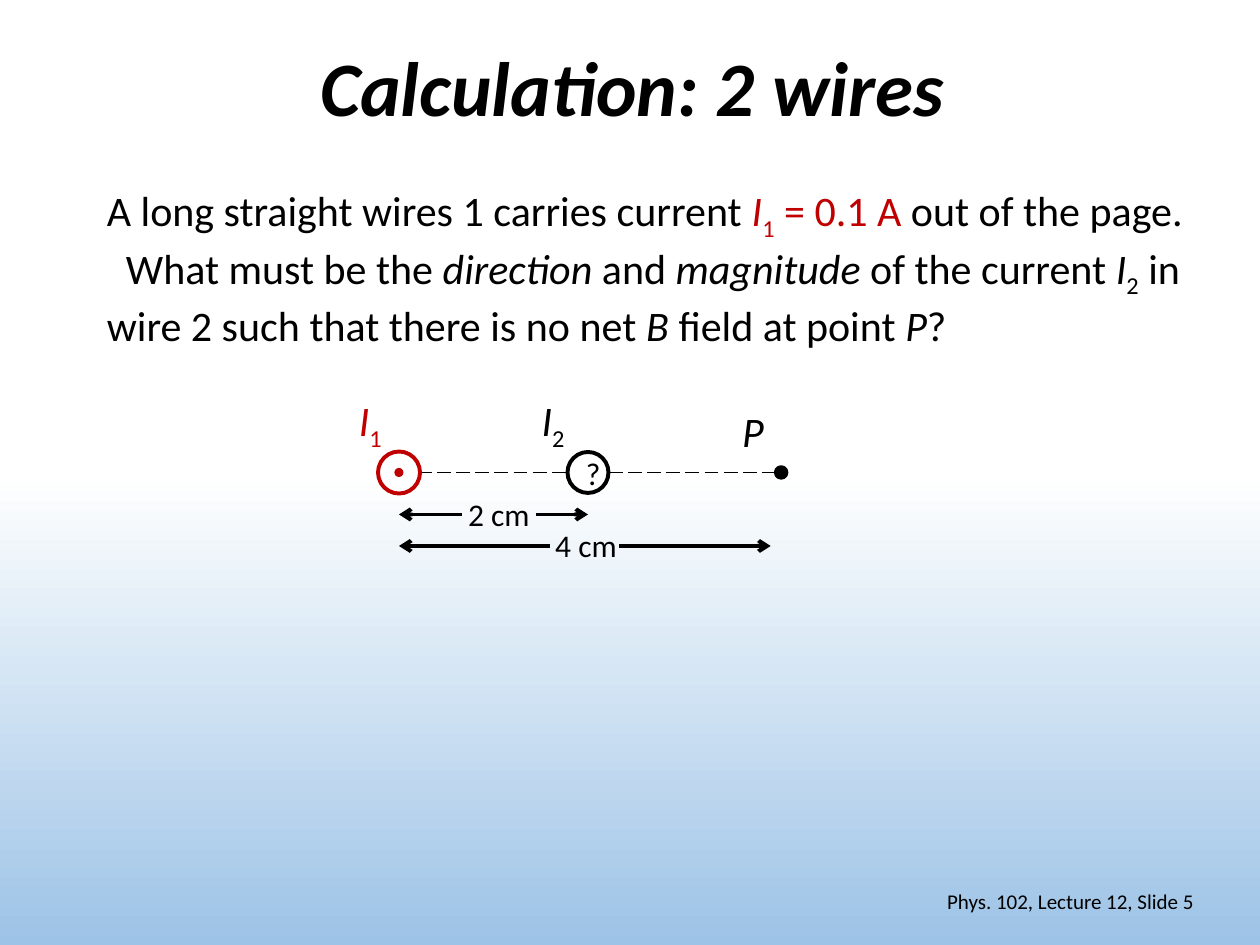
from lxml.etree import SubElement
from pptx import Presentation
from pptx.dml.color import RGBColor
from pptx.enum.dml import MSO_LINE_DASH_STYLE as Dash
from pptx.enum.shapes import MSO_CONNECTOR as Connector, MSO_SHAPE as Shape
from pptx.enum.text import MSO_ANCHOR as Anchor, MSO_AUTO_SIZE as AutoSize, PP_ALIGN as Align
from pptx.oxml.ns import qn
from pptx.util import Inches, Pt

BLACK, RED, WHITE, BLUE = "000000", "C00000", "FFFFFF", "9DC3E6"
COLUMNS, ROWS = 120, 90
rgb = RGBColor.from_string

presentation = Presentation()
presentation.slide_width, presentation.slide_height = Inches(10), Inches(7.5)
slide = presentation.slides.add_slide(presentation.slide_layouts[6])
column = presentation.slide_width / COLUMNS
row = presentation.slide_height / ROWS


def place(left, top, width, height):
    return [round(left * column), round(top * row), round(width * column), round(height * row)]


def write(shape, runs, size, color=BLACK, align=Align.LEFT, spacing=None, **frame_format):
    frame = shape.text_frame
    for key, value in {"word_wrap": True, **frame_format}.items():
        setattr(frame, key, value)
    paragraph = frame.paragraphs[0]
    paragraph.alignment, paragraph.line_spacing = align, spacing
    for text, style, run_color in runs:
        run = paragraph.add_run()
        run.text = text
        font_format = {"name": "Calibri", "size": Pt(size), "bold": "b" in style, "italic": "i" in style}
        for key, value in font_format.items():
            setattr(run.font, key, value)
        run.font.color.rgb = rgb(run_color or color)
        if "s" in style:
            run._r.get_or_add_rPr().set("baseline", "-25000")


background = slide.background.fill
background.gradient()
background.gradient_angle = 270
for stop, position, color in zip(background.gradient_stops, (0.5, 1), (WHITE, BLUE)):
    stop.position, stop.color.rgb = position, rgb(color)

title = slide.shapes.add_textbox(*place(8.5, 0, 103.5, 17.4))
write(title, [("Calculation: 2 wires", "bi", None)], 44, align=Align.CENTER, spacing=0.9,
      vertical_anchor=Anchor.MIDDLE)

footer = slide.shapes.add_textbox(*place(84.7, 83.4, 30.2, 4.8))
write(footer, [("Phys. 102, Lecture 12, Slide 5", "", None)], 12, align=Align.RIGHT,
      vertical_anchor=Anchor.MIDDLE)

question = slide.shapes.add_textbox(*place(9, 17, 105, 15.7))
write(question, [
    ("A long straight wires 1 carries current ", "", None),
    ("I", "i", RED), ("1", "s", RED), (" = 0.1 A ", "", RED),
    ("out of the page.   What must be the ", "", None),
    ("direction ", "i", None), ("and ", "", None), ("magnitude", "i", None),
    (" of the current ", "", None), ("I", "i", None), ("2", "s", None),
    (" in wire 2 such that there is no net ", "", None), ("B", "i", None),
    (" field at point ", "", None), ("P", "i", None), ("?", "", None),
], 24, auto_size=AutoSize.SHAPE_TO_FIT_TEXT)

wire_1, wire_2, axis = 38, 56, 45
lines = [
    (wire_1, 74.3, axis, 1, None),
    (wire_1, 44, 49, 2.25, "headEnd"),
    (51, wire_2, 49, 2.25, "tailEnd"),
    (wire_1, 52.4, 52, 2.25, "headEnd"),
    (59, 73.4, 52, 2.25, "tailEnd"),
]
for start, end, level, width, arrow in lines:
    connector = slide.shapes.add_connector(
        Connector.STRAIGHT, round(start * column), round(level * row), round(end * column), round(level * row))
    connector.line.color.rgb = rgb(BLACK)
    connector.line.width = Pt(width)
    if arrow:
        SubElement(connector.line._get_or_add_ln(), qn("a:" + arrow), type="arrow")
    else:
        connector.line.dash_style = Dash.LONG_DASH
    SubElement(connector._element.spPr, qn("a:effectLst"))

circles = [
    (74.4, 1, BLACK, BLACK, 2.25, ""),
    (wire_1, 4, WHITE, RED, 2.25, ""),
    (wire_1, 0.7, RED, RED, 1, ""),
    (wire_2, 3.9, WHITE, BLACK, 2.25, "?"),
]
for center, diameter, fill, outline, width, mark in circles:
    circle = slide.shapes.add_shape(
        Shape.OVAL, *place(center - diameter / 2, axis - diameter / 2, diameter, diameter))
    circle.shadow.inherit = False
    circle.fill.solid()
    circle.fill.fore_color.rgb = rgb(fill)
    circle.line.color.rgb = rgb(outline)
    circle.line.width = Pt(width)
    if mark:
        write(circle, [(mark, "", None)], 18, align=Align.CENTER, vertical_anchor=Anchor.MIDDLE)

labels = [
    (33, 37, 4.8, 6, [("I", "i", None), ("1", "s", None)], 24, RED),
    (50.4, 37, 4.8, 6, [("I", "i", None), ("2", "s", None)], 24, BLACK),
    (69.5, 38, 4.6, 6, [("P", "i", None)], 24, BLACK),
    (43.4, 46.6, 8.4, 4.8, [("2 cm", "", None)], 18, BLACK),
    (51.7, 49.5, 8.4, 4.8, [("4 cm", "", None)], 18, BLACK),
]
for left, top, width, height, runs, size, color in labels:
    label = slide.shapes.add_textbox(*place(left, top, width, height))
    write(label, runs, size, color, word_wrap=False, auto_size=AutoSize.SHAPE_TO_FIT_TEXT)

presentation.save("out.pptx")
